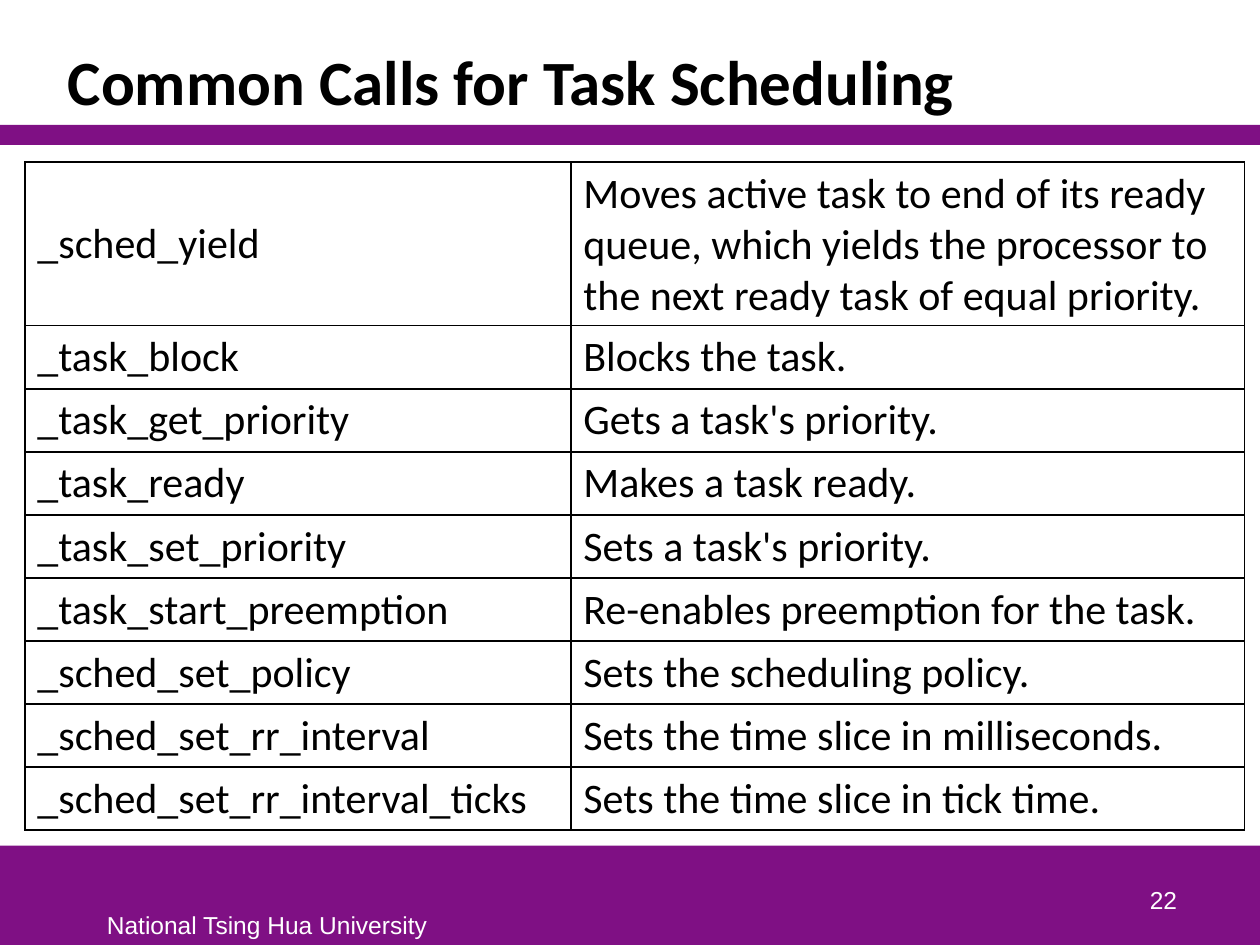
from lxml import etree
from pptx import Presentation
from pptx.dml.color import RGBColor
from pptx.enum import shapes, text
from pptx.oxml.ns import qn
from pptx.util import Pt

PURPLE, BLACK, WHITE = "7F1084", "000000", "FFFFFF"
CALLS = [
    ("_sched_yield", "Moves active task to end of its ready queue, which yields "
                     "the processor to the next ready task of equal priority."),
    ("_task_block", "Blocks the task."),
    ("_task_get_priority", "Gets a task's priority."),
    ("_task_ready", "Makes a task ready."),
    ("_task_set_priority", "Sets a task's priority."),
    ("_task_start_preemption", "Re-enables preemption for the task."),
    ("_sched_set_policy", "Sets the scheduling policy."),
    ("_sched_set_rr_interval", "Sets the time slice in milliseconds."),
    ("_sched_set_rr_interval_ticks", "Sets the time slice in tick time."),
]


def rgb(value):
    return RGBColor.from_string(value)


def write(tf, content, size, font, color, bold=False):
    """Put content in the frame's first paragraph and return that paragraph."""
    p = tf.paragraphs[0]
    p.text = content
    p.font.size, p.font.name, p.font.bold = Pt(size), font, bold
    p.font.color.rgb = rgb(color)
    return p


prs = Presentation()
prs.slide_width, prs.slide_height = Pt(720), Pt(540)
s = prs.slides.add_slide(prs.slide_layouts[6])

# Footer band and title rule
for top, height in ((483.3, 56.7), (71.4, 11.4)):
    band = s.shapes.add_shape(shapes.MSO_SHAPE.RECTANGLE, 0, Pt(top), Pt(720), Pt(height))
    band.shadow.inherit = False
    band.fill.solid()
    band.fill.fore_color.rgb = rgb(PURPLE)
    band.line.fill.background()

# Footer, title and page number
tf = s.shapes.add_textbox(Pt(54), Pt(516.2), Pt(198.7), Pt(24)).text_frame
tf.word_wrap = False
tf.auto_size = text.MSO_AUTO_SIZE.SHAPE_TO_FIT_TEXT
write(tf, "National Tsing Hua University", 14, "Arial", WHITE)

tf = s.shapes.add_textbox(Pt(31.7), Pt(18), Pt(645.8), Pt(53.3)).text_frame
tf.word_wrap = True
tf.vertical_anchor = text.MSO_ANCHOR.BOTTOM
p = write(tf, "Common Calls for Task Scheduling", 36, "Calibri", BLACK, True)
p.line_spacing = 0.85

tf = s.shapes.add_textbox(Pt(530), Pt(490.3), Pt(149.7), Pt(36)).text_frame
tf.word_wrap = True
tf.vertical_anchor = text.MSO_ANCHOR.BOTTOM
p = write(tf, "22", 14, "Arial", WHITE)
p.alignment = text.PP_ALIGN.RIGHT

# Table of calls
table = s.shapes.add_table(len(CALLS), 2, Pt(14.2), Pt(92.5), Pt(697), Pt(381.6)).table
table.first_row = table.horz_banding = False
table.columns[0].width, table.columns[1].width = Pt(312), Pt(385)
for i, call in enumerate(CALLS):
    table.rows[i].height = Pt(34.6 if i else 80)
    for j, content in enumerate(call):
        cell = table.cell(i, j)
        cell.vertical_anchor = text.MSO_ANCHOR.MIDDLE
        write(cell.text_frame, content, 24, "Calibri", BLACK)
        tcPr = cell._tc.get_or_add_tcPr()
        for side in ("lnL", "lnR", "lnT", "lnB"):
            ln = etree.SubElement(tcPr, qn("a:" + side), w=str(Pt(1)))
            fill = etree.SubElement(ln, qn("a:solidFill"))
            etree.SubElement(fill, qn("a:srgbClr"), val=BLACK)
        cell.fill.background()

prs.save("out.pptx")
